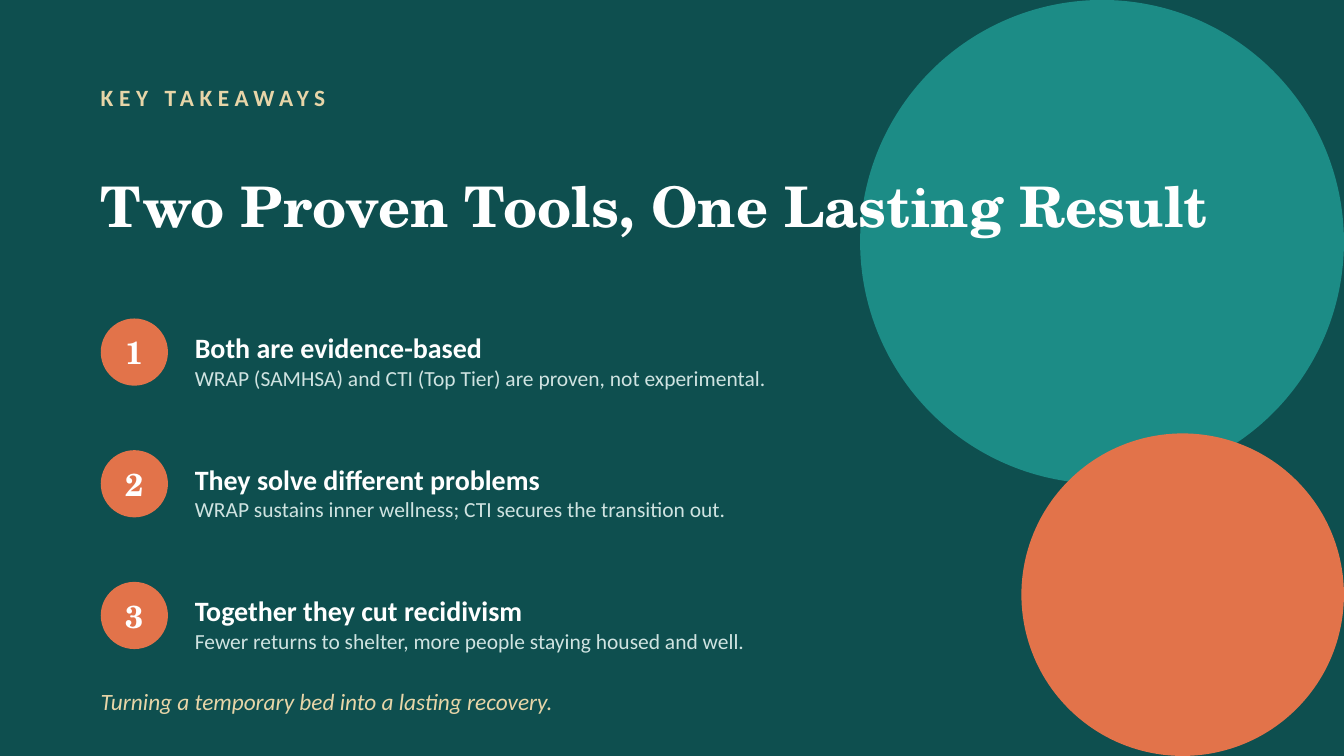
from pptx import Presentation
from pptx.dml.color import RGBColor as Rgb
from pptx.enum.shapes import MSO_SHAPE as Kind
from pptx.enum.text import MSO_ANCHOR as Anchor, PP_ALIGN as Align
from pptx.util import Pt

PX = 4572
HUES = {
    "deep": "0E4F4F",
    "teal": "1C8C86",
    "coral": "E2734A",
    "sand": "E7D5A8",
    "white": "FFFFFF",
    "mist": "CFE3E1",
}
SANS = "Calibri"
SERIF = "TeX Gyre Schola"
POINTS = [
    ("Both are evidence-based",
     "WRAP (SAMHSA) and CTI (Top Tier) are proven, not experimental."),
    ("They solve different problems",
     "WRAP sustains inner wellness; CTI secures the transition out."),
    ("Together they cut recidivism",
     "Fewer returns to shelter, more people staying housed and well."),
]


class Deck:
    """Holds the style and the current slide, and draws each kind of element."""

    def __init__(self, wide, high):
        self.show = Presentation()
        self.show.slide_width = wide * PX
        self.show.slide_height = high * PX
        self.slide = self.show.slides.add_slide(self.show.slide_layouts[5])
        self.shapes = self.slide.shapes
        self.paint(self.slide.background.fill, "deep")

    def paint(self, fill, hue):
        fill.solid()
        fill.fore_color.rgb = Rgb.from_string(HUES[hue])

    def style(self, run, size, hue, face=SANS, bold=False, slant=False, track=0):
        font = run.font
        font.name, font.size = face, Pt(size)
        font.bold, font.italic = bold, slant
        font.color.rgb = Rgb.from_string(HUES[hue])
        if track:
            run._r.get_or_add_rPr().set("spc", str(track * 100))

    def frame(self, shape, text, align=Align.LEFT):
        frame = shape.text_frame
        frame.margin_left = frame.margin_right = 0
        frame.margin_top = frame.margin_bottom = 0
        frame.word_wrap = True
        frame.vertical_anchor = Anchor.MIDDLE
        para = frame.paragraphs[0]
        para.text = text
        para.alignment = align
        return para

    def disc(self, x, y, size, hue):
        disc = self.shapes.add_shape(Kind.OVAL, x * PX, y * PX, size * PX, size * PX)
        disc.shadow.inherit = False
        self.paint(disc.fill, hue)
        disc.line.fill.background()

    def title(self, x, y, w, h, text, **look):
        title = self.shapes.title
        title.left, title.top = x * PX, y * PX
        title.width, title.height = w * PX, h * PX
        self.style(self.frame(title, text).runs[0], **look)
        self.shapes._spTree.append(title._element)

    def label(self, x, y, w, h, text, *looks, align=Align.LEFT, space=None):
        box = self.shapes.add_textbox(x * PX, y * PX, w * PX, h * PX)
        para = self.frame(box, text, align)
        para.line_spacing = space
        for run, look in zip(para.runs, looks):
            self.style(run, **look)

    def point(self, y, mark, head, note):
        self.disc(150, y, 100, "coral")
        self.label(150, y, 100, 100, mark,
                   dict(size=17, hue="white", face=SERIF, bold=True), align=Align.CENTER)
        self.label(290, y - 24, 1580, 172, f"{head}\n{note}",
                   dict(size=15, hue="white", bold=True),
                   dict(size=11.5, hue="mist"), space=1.02)


def main():
    deck = Deck(2000, 1125)
    deck.disc(1280, 0, 720, "teal")
    deck.disc(1520, 645, 480, "coral")
    deck.label(150, 110, 1600, 70, "KEY TAKEAWAYS",
               dict(size=12.5, hue="sand", bold=True, track=3))
    deck.title(150, 210, 1700, 190, "Two Proven Tools, One Lasting Result",
               size=30, hue="white", face=SERIF, bold=True)
    for i, (head, note) in enumerate(POINTS):
        deck.point(474 + 196 * i, str(i + 1), head, note)
    deck.label(150, 1004, 1700, 80, "Turning a temporary bed into a lasting recovery.",
               dict(size=12.5, hue="sand", slant=True))
    deck.show.save("out.pptx")


if __name__ == "__main__":
    main()
